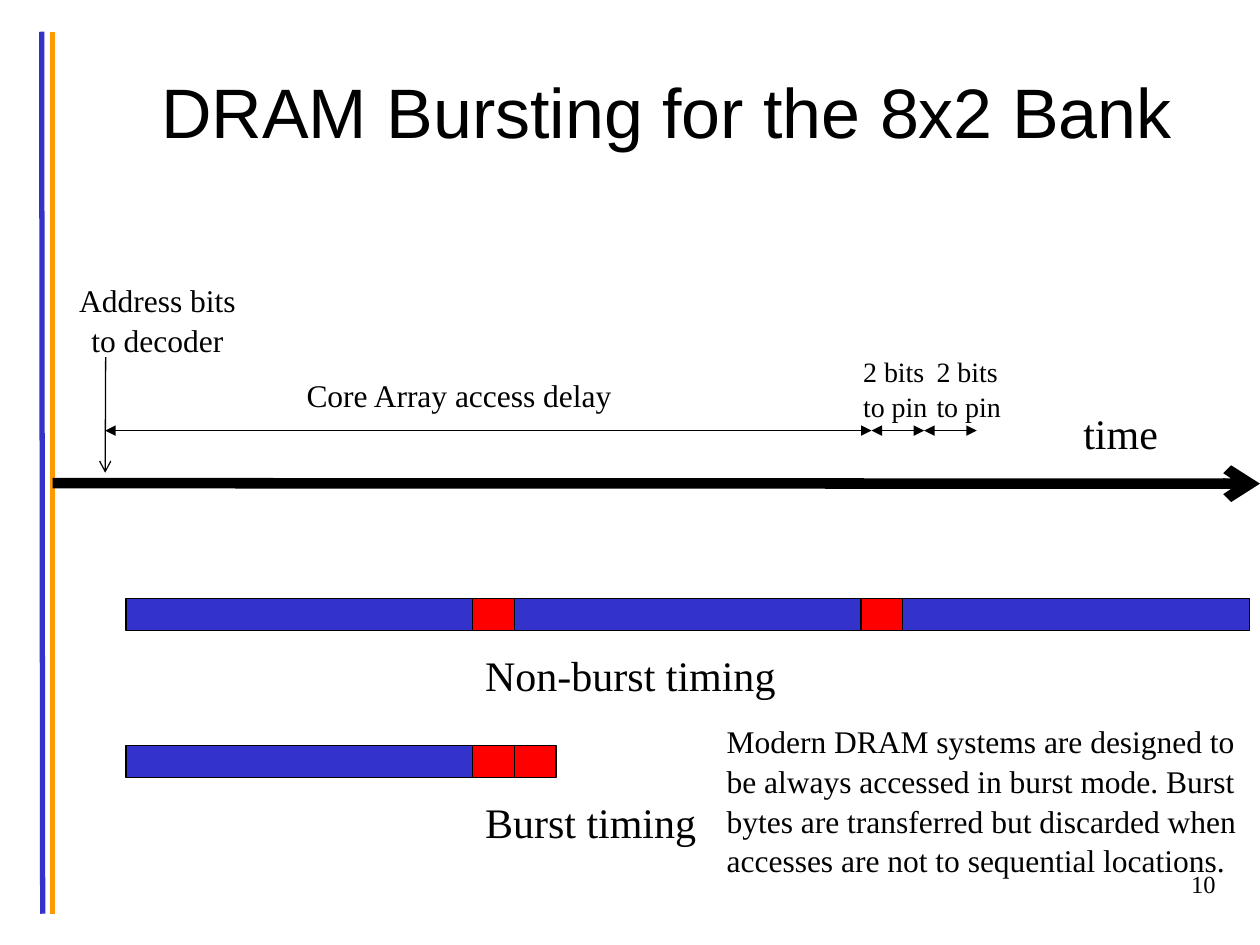
from lxml import etree
from pptx import Presentation
from pptx.dml.color import RGBColor
from pptx.enum.shapes import MSO_CONNECTOR, MSO_SHAPE
from pptx.enum.text import MSO_ANCHOR, MSO_AUTO_SIZE, PP_ALIGN
from pptx.oxml.ns import qn
from pptx.util import Cm, Pt

LEFT, CENTER, RIGHT = PP_ALIGN.LEFT, PP_ALIGN.CENTER, PP_ALIGN.RIGHT
TOP, MIDDLE = MSO_ANCHOR.TOP, MSO_ANCHOR.MIDDLE
GROW, FIXED = MSO_AUTO_SIZE.SHAPE_TO_FIT_TEXT, MSO_AUTO_SIZE.NONE
STRAIGHT = MSO_CONNECTOR.STRAIGHT
RECTANGLE = MSO_SHAPE.RECTANGLE

BLACK, BLUE, ORANGE, RED = "000000", "3333CC", "FF9900", "FF0000"

# Content: text, box (left, top, width, height in cm), format
TEXTS = [
    ("DRAM Bursting for the 8x2 Bank", (1.91, 0.64, 23.06, 3.18),
     dict(size=40, font="Arial", align=CENTER, anchor=MIDDLE,
          auto_size=FIXED, spacing=1)),
    ("time", (21.59, 8.05, 2.03, 1.3), dict(size=24, wrap=False)),
    ("Address bits to decoder", (1.06, 5.5, 4.23, 1.8), dict(align=CENTER)),
    ("Core Array access delay", (5.93, 7.41, 7.62, 1.02), {}),
    ("Non-burst timing", (9.53, 12.91, 10.8, 1.3), dict(size=24)),
    ("Burst timing", (9.53, 15.88, 4.8, 1.3), dict(size=24, wrap=False)),
    ("Modern DRAM systems are designed to be always accessed in burst mode. "
     "Burst bytes are transferred but discarded when accesses are not to "
     "sequential locations.", (14.4, 14.4, 11, 3.33), {}),
    ("10", (19.47, 17.36, 5.29, 1.27),
     dict(size=14, align=RIGHT, auto_size=FIXED)),
]
PIN_TEXT = "2 bits\nto pin"
PIN_LEFTS = [17.15, 18.63]

# Timing rows: top in cm, then the phases in order
CORE, PIN = (6.99, BLUE), (0.84, RED)
TIMING_ROWS = [
    (12.07, [CORE, PIN, CORE, PIN, CORE]),
    (15.03, [CORE, PIN, PIN]),
]
ROW_LEFT, ROW_HEIGHT = 2.54, 0.64

# Ends of the delay and pin intervals on the time axis
INTERVAL_MARKS = [2.12, 17.57, 18.63, 19.69]
INTERVAL_TOP = 8.68


def color(value):
    return RGBColor.from_string(value)


def add_text(slide, text, box, size=18, font="Times New Roman", align=LEFT,
             anchor=TOP, wrap=True, auto_size=GROW, spacing=1.05):
    frame = slide.shapes.add_textbox(*map(Cm, box)).text_frame
    frame.word_wrap = wrap
    frame.auto_size = auto_size
    frame.vertical_anchor = anchor
    frame.text = text
    for paragraph in frame.paragraphs:
        paragraph.alignment = align
        paragraph.line_spacing = spacing
        paragraph.font.size = Pt(size)
        paragraph.font.name = font
        paragraph.font.color.rgb = color(BLACK)


def add_line(slide, start, end, line_color=BLACK, width=0.75, head=None, tail=None):
    connector = slide.shapes.add_connector(STRAIGHT, *map(Cm, start + end))
    connector.line.color.rgb = color(line_color)
    connector.line.width = Pt(width)
    outline = connector.line._get_or_add_ln()
    for tag, arrow in (("a:headEnd", head), ("a:tailEnd", tail)):
        if arrow:
            etree.SubElement(outline, qn(tag), type=arrow)
    etree.SubElement(connector._element.spPr, qn("a:effectLst"))


def add_phase(slide, left, top, width, fill):
    shape = slide.shapes.add_shape(
        RECTANGLE, Cm(left), Cm(top), Cm(width), Cm(ROW_HEIGHT))
    shape.shadow.inherit = False
    shape.fill.solid()
    shape.fill.fore_color.rgb = color(fill)
    shape.line.color.rgb = color(BLACK)
    shape.line.width = Pt(0.75)


def main():
    presentation = Presentation()
    presentation.slide_width, presentation.slide_height = Cm(25.4), Cm(19.05)
    slide = presentation.slides.add_slide(presentation.slide_layouts[6])

    # Side rules
    add_line(slide, (0.84, 0.64), (0.86, 18.42), BLUE, 3)
    add_line(slide, (1.06, 0.64), (1.06, 18.42), ORANGE, 3)

    # Time axis, address arrow and intervals
    add_line(slide, (1.06, 9.74), (25.4, 9.75), width=6, tail="arrow")
    add_line(slide, (2.13, 7.2), (2.12, 9.53), tail="arrow")
    for start, end in zip(INTERVAL_MARKS, INTERVAL_MARKS[1:]):
        add_line(slide, (start, INTERVAL_TOP), (end, INTERVAL_TOP),
                 head="triangle", tail="triangle")

    # Timing rows
    for top, phases in TIMING_ROWS:
        left = ROW_LEFT
        for width, fill in phases:
            add_phase(slide, left, top, width, fill)
            left += width

    # Texts
    for text, box, text_format in TEXTS:
        add_text(slide, text, box, **text_format)
    for left in PIN_LEFTS:
        add_text(slide, PIN_TEXT, (left, 6.99, 1.83, 1.63), size=16, wrap=False)

    presentation.save("out.pptx")


if __name__ == "__main__":
    main()
